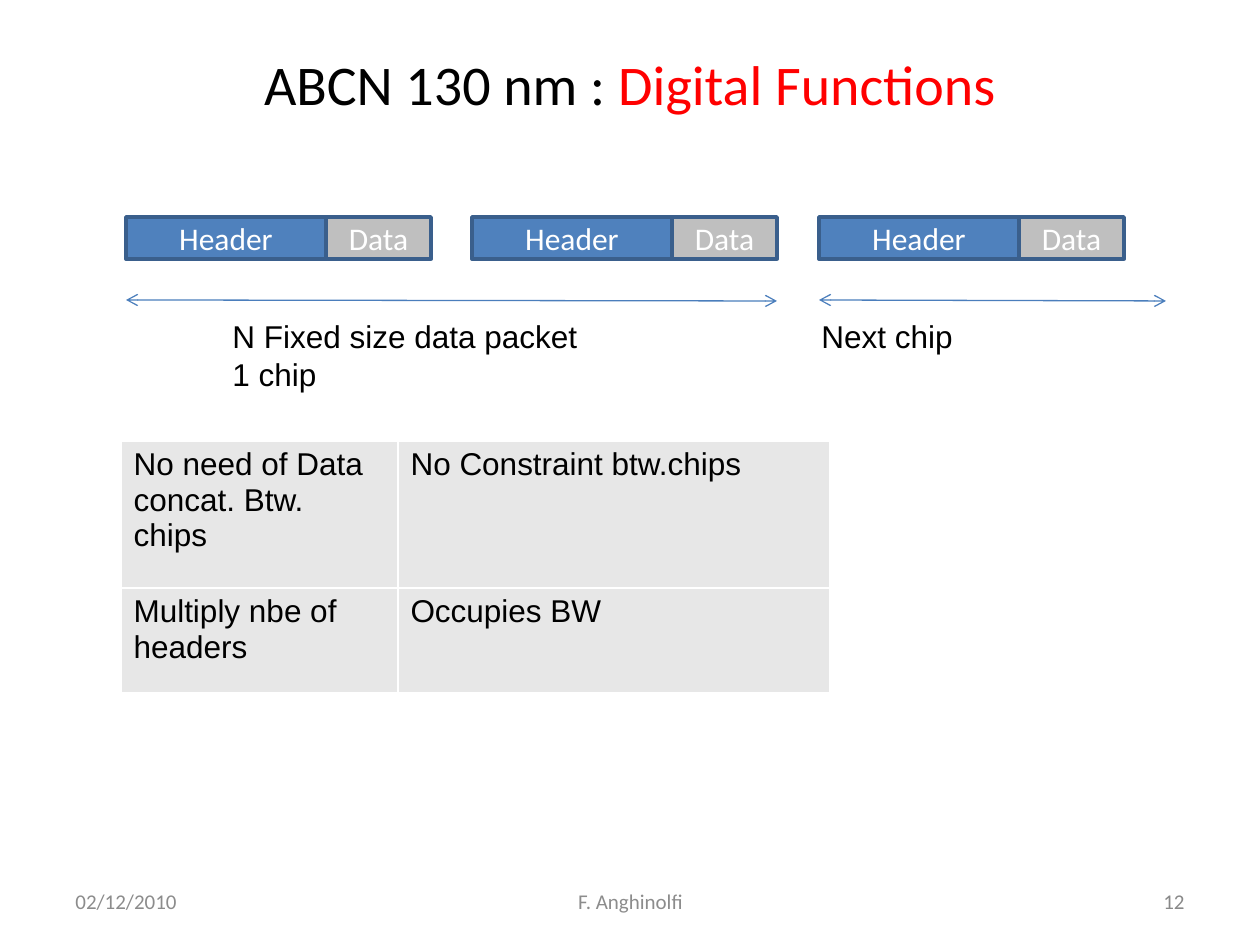
"""Build the slide on ABCN 130 nm digital functions and its data packets."""
from lxml.etree import SubElement
from pptx import Presentation
from pptx.dml.color import RGBColor
from pptx.enum.shapes import MSO_CONNECTOR, MSO_SHAPE
from pptx.enum.text import MSO_ANCHOR, MSO_AUTO_SIZE, PP_ALIGN
from pptx.oxml.ns import qn
from pptx.util import Pt

SCALE = 914400 / 126
LEFT, CENTER, RIGHT = PP_ALIGN.LEFT, PP_ALIGN.CENTER, PP_ALIGN.RIGHT

TITLE = [("ABCN 130 nm : ", "000000"), ("Digital Functions", "FF0000")]
TITLE_SIZE = 32
FOOTERS = [
    ("02/12/2010", 63, 294, LEFT, "8C8C8C"),
    ("F. Anghinolfi", 431, 399, CENTER, "8C8C8C"),
    ("12", 903, 294, RIGHT, "898989"),
]
PACKET_LEFTS = (126, 472, 819)
PACKET_PARTS = [("Header", 200, "4F81BD"), ("Data", 105, "BFBFBF")]
SPANS = [(126, 777), (819, 1166)]
CAPTIONS = [
    (["N Fixed size data packet", "1 chip"], 220, 374, 89),
    (["Next chip"], 809, 158, 50),
]
REMARKS = [
    ["No need of Data concat. Btw. chips", "No Constraint btw.chips"],
    ["Multiply nbe of headers", "Occupies BW"],
]
COLUMN_WIDTHS = (277, 432)
ROW_HEIGHTS = (147, 105)


def px(*lengths):
    return [round(length * SCALE) for length in lengths]


def color(code):
    return RGBColor.from_string(code)


def write(paragraph, words, size, font, code, align=LEFT):
    paragraph.alignment = align
    run = paragraph.add_run()
    run.text = words
    run.font.size = Pt(size)
    run.font.name = font
    run.font.color.rgb = color(code)


def add_text(slide, lines, box, size, font, code, align=LEFT, wrap=True):
    frame = slide.shapes.add_textbox(*px(*box)).text_frame
    frame.word_wrap = wrap
    frame.vertical_anchor = MSO_ANCHOR.MIDDLE if wrap else MSO_ANCHOR.TOP
    frame.auto_size = MSO_AUTO_SIZE.NONE if wrap else MSO_AUTO_SIZE.SHAPE_TO_FIT_TEXT
    for index, line in enumerate(lines):
        paragraph = frame.add_paragraph() if index else frame.paragraphs[0]
        write(paragraph, line, size, font, code, align)


def add_title(slide):
    title = slide.shapes.title
    title.left, title.top, title.width, title.height = px(63, 38, 1134, 157)
    frame = title.text_frame
    frame.auto_size = MSO_AUTO_SIZE.NONE
    frame.vertical_anchor = MSO_ANCHOR.MIDDLE
    paragraph = frame.paragraphs[0]
    for words, code in TITLE:
        write(paragraph, words, TITLE_SIZE, "Calibri", code, CENTER)
    paragraph.add_line_break()
    line_break = paragraph._p[-1]
    for parent, tag in ((line_break, "a:rPr"), (paragraph._p, "a:endParaRPr")):
        SubElement(parent, qn(tag), sz=str(TITLE_SIZE * 100))


def add_packet(slide, left):
    for words, width, fill in PACKET_PARTS:
        part = slide.shapes.add_shape(MSO_SHAPE.RECTANGLE, *px(left, 217, width, 42))
        part.shadow.inherit = False
        part.fill.solid()
        part.fill.fore_color.rgb = color(fill)
        part.line.color.rgb = color("3A5F8C")
        part.line.width = Pt(2)
        part.text_frame.vertical_anchor = MSO_ANCHOR.MIDDLE
        write(part.text_frame.paragraphs[0], words, 18, "Calibri", "FFFFFF", CENTER)
        left += width


def add_span(slide, start, end):
    span = slide.shapes.add_connector(MSO_CONNECTOR.STRAIGHT, *px(start, 300, end, 301))
    span.line.color.rgb = color("4B7EBC")
    span.line.width = Pt(0.75)
    line = span.line._get_or_add_ln()
    for end_tag in ("a:headEnd", "a:tailEnd"):
        SubElement(line, qn(end_tag), type="arrow")
    SubElement(span._element.spPr, qn("a:effectLst"))


def add_borders(cell):
    properties = cell._tc.get_or_add_tcPr()
    for position, side in enumerate(("a:lnL", "a:lnR", "a:lnT", "a:lnB")):
        border = SubElement(properties, qn(side), w="12700")
        SubElement(SubElement(border, qn("a:solidFill")), qn("a:srgbClr"), val="FFFFFF")
        properties.insert(position, border)


def add_remarks(slide):
    size = (sum(COLUMN_WIDTHS), sum(ROW_HEIGHTS))
    table = slide.shapes.add_table(len(REMARKS), 2, *px(121, 441, *size)).table
    table.first_row = table.horz_banding = False
    for column, width in zip(table.columns, px(*COLUMN_WIDTHS)):
        column.width = width
    for row, height, remarks in zip(table.rows, px(*ROW_HEIGHTS), REMARKS):
        row.height = height
        for cell, words in zip(row.cells, remarks):
            cell.fill.solid()
            cell.fill.fore_color.rgb = color("E7E7E7")
            add_borders(cell)
            write(cell.text_frame.paragraphs[0], words, 18, "Arial", "000000")


def main():
    deck = Presentation()
    deck.slide_width, deck.slide_height = px(1260, 945)
    slide = deck.slides.add_slide(deck.slide_layouts[5])
    add_title(slide)
    for words, left, width, align, code in FOOTERS:
        add_text(slide, [words], (left, 876, width, 50), 12, "Calibri", code, align)
    for left in PACKET_LEFTS:
        add_packet(slide, left)
    for start, end in SPANS:
        add_span(slide, start, end)
    for lines, left, width, height in CAPTIONS:
        box = (left, 311, width, height)
        add_text(slide, lines, box, 18, "Arial", "000000", wrap=False)
    add_remarks(slide)
    deck.save("out.pptx")


if __name__ == "__main__":
    main()
